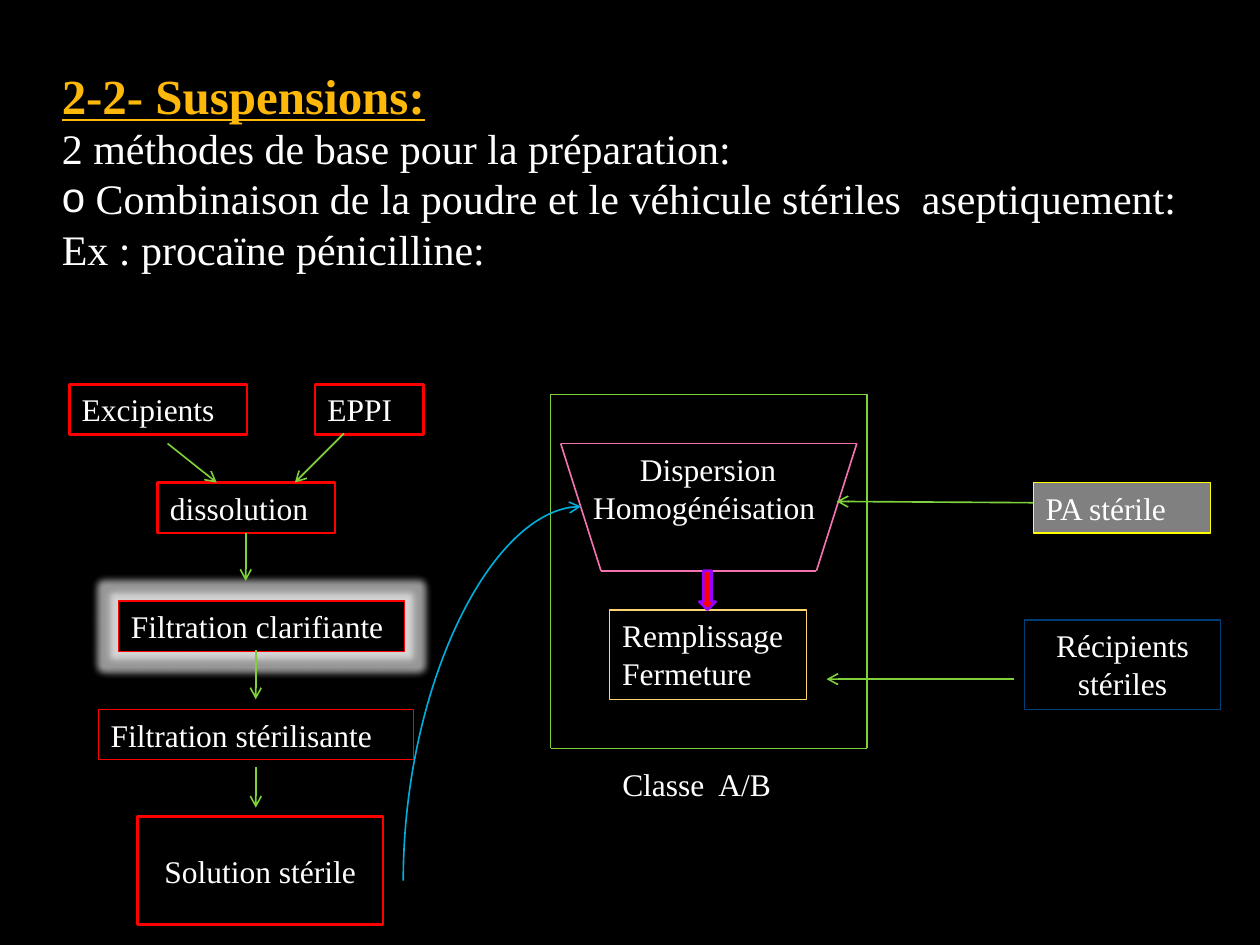
"""Build the slide on preparing sterile suspensions."""
from lxml import etree
from pptx import Presentation
from pptx.dml.color import RGBColor
from pptx.enum import shapes as sh, text as tx
from pptx.oxml.ns import qn
from pptx.util import Inches, Pt

BLACK = RGBColor(0x00, 0x00, 0x00)
WHITE = RGBColor(0xFF, 0xFF, 0xFF)
GOLD = RGBColor(0xFE, 0xB8, 0x0A)
RED = RGBColor(0xFF, 0x00, 0x00)
GREY = RGBColor(0x80, 0x80, 0x80)
YELLOW = RGBColor(0xFF, 0xFF, 0x00)
CREAM = RGBColor(0xFE, 0xD4, 0x6C)
NAVY = RGBColor(0x00, 0x3F, 0x75)
GREEN = RGBColor(0x7F, 0xD1, 0x3B)
PINK = RGBColor(0xF2, 0x73, 0xAF)
BLUE = RGBColor(0x00, 0xAD, 0xDC)
PURPLE = RGBColor(0x99, 0x00, 0xFF)
LEFT, MID = tx.PP_ALIGN.LEFT, tx.PP_ALIGN.CENTER

deck = Presentation()
deck.slide_width, deck.slide_height = Inches(10), Inches(7.5)
slide = deck.slides.add_slide(deck.slide_layouts[1])
slide.background.fill.solid()
slide.background.fill.fore_color.rgb = BLACK


def write(item, lines, size=18, color=WHITE, align=LEFT):
    frame = item.text_frame
    frame.word_wrap = True
    frame.auto_size = tx.MSO_AUTO_SIZE.NONE
    frame.vertical_anchor = tx.MSO_ANCHOR.TOP
    for i, line in enumerate(lines):
        para = frame.add_paragraph() if i else frame.paragraphs[0]
        para.alignment = align
        para.space_before = Pt(0)
        run = para.add_run()
        run.text = line
        run.font.name = "Times New Roman"
        run.font.size = Pt(size)
        run.font.color.rgb = color
    return frame


def link(x1, y1, x2, y2, color, arrow=False, kind=sh.MSO_CONNECTOR.STRAIGHT):
    wire = slide.shapes.add_connector(kind, *map(Inches, (x1, y1, x2, y2)))
    wire.line.color.rgb = color
    wire.line.width = Pt(0.94)
    props = wire._element.spPr
    etree.SubElement(props, qn("a:effectLst"))
    if arrow:
        etree.SubElement(props.find(qn("a:ln")), qn("a:tailEnd"), type="arrow")
    return wire


title, body = slide.placeholders
for item, top, high in ((title, 0.47, 0.5), (body, 0.92, 1.33)):
    item.left, item.top = Inches(0.39), Inches(top)
    item.width, item.height = Inches(9.38), Inches(high)
head = write(title, ["2-2- Suspensions:"], 28, GOLD).paragraphs[0].runs[0].font
head.bold = head.underline = True
lines = [
    "2 méthodes de base pour la préparation:",
    " Combinaison de la poudre et le véhicule stériles  aseptiquement:",
    "Ex : procaïne pénicilline:",
]
for para in write(body, lines, 24).paragraphs:
    props = para._p.get_or_add_pPr()
    props.set("marL", "0")
    props.set("indent", "0")
    if para.text == lines[1]:
        etree.SubElement(props, qn("a:buChar"), char="o")
    else:
        etree.SubElement(props, qn("a:buNone"))

boxes = [
    (0.55, 3.05, 1.41, 0.4, ["Excipients"], BLACK, RED, 1.5, LEFT),
    (2.5, 3.05, 0.86, 0.4, ["EPPI"], BLACK, RED, 1.5, LEFT),
    (1.25, 3.83, 1.41, 0.4, ["dissolution"], BLACK, RED, 1.5, LEFT),
    (0.94, 4.77, 2.27, 0.4, ["Filtration clarifiante"], BLACK, RED, 0.94, LEFT),
    (0.78, 5.63, 2.5, 0.4, ["Filtration stérilisante"], None, RED, 0.75, LEFT),
    (1.09, 6.48, 1.95, 0.86, ["Solution stérile"], BLACK, RED, 1.5, MID),
    (8.2, 3.83, 1.41, 0.4, ["PA stérile"], GREY, YELLOW, 0.75, LEFT),
    (4.84, 4.84, 1.56, 0.71, ["Remplissage", "Fermeture"], None, CREAM, 0.75, LEFT),
    (8.13, 4.92, 1.56, 0.71, ["Récipients stériles"], None, NAVY, 0.75, MID),
]
made = {}
for x, y, w, h, lines, fill, edge, thick, align in boxes:
    box = slide.shapes.add_shape(sh.MSO_SHAPE.RECTANGLE, *map(Inches, (x, y, w, h)))
    box.shadow.inherit = False
    if fill is None:
        box.fill.background()
    else:
        box.fill.solid()
        box.fill.fore_color.rgb = fill
    box.line.color.rgb = edge
    box.line.width = Pt(thick)
    write(box, lines, align=align)
    made[lines[0]] = box
made["Solution stérile"].text_frame.vertical_anchor = tx.MSO_ANCHOR.MIDDLE

effect = made["Filtration clarifiante"]._element.spPr.find(qn("a:effectLst"))
glow = etree.SubElement(effect, qn("a:glow"), rad=str(Inches(0.11)))
tint = etree.SubElement(glow, qn("a:srgbClr"), val=str(WHITE))
etree.SubElement(tint, qn("a:alpha"), val="60000")

frame = [(4.37, 3.13), (6.88, 3.13), (6.88, 5.94), (4.37, 5.94)]
funnel = [(4.45, 3.52), (6.8, 3.52), (6.48, 4.53), (4.77, 4.53)]
for points, color in ((frame, GREEN), (funnel, PINK)):
    for start, end in zip(points, points[1:] + points[:1]):
        link(*start, *end, color)

for ends in (
    (2.73, 3.44, 2.34, 3.83),
    (1.33, 3.52, 1.72, 3.83),
    (1.95, 4.23, 1.95, 4.61),
    (2.03, 5.16, 2.03, 5.55),
    (2.03, 6.09, 2.03, 6.41),
    (8.2, 3.99, 6.64, 3.98),
    (8.05, 5.39, 6.56, 5.39),
):
    link(*ends, GREEN, True)

curve = link(5.39, 6.21, 2.42, 4.8, BLUE, True, sh.MSO_CONNECTOR.CURVE)
curve._element.spPr.find(qn("a:xfrm")).set("rot", "5400000")
curve._element.spPr.find(qn("a:prstGeom")).set("prst", "curvedConnector2")

down = slide.shapes.add_shape(
    sh.MSO_SHAPE.DOWN_ARROW, *map(Inches, (5.55, 4.53, 0.13, 0.31)))
down.shadow.inherit = False
down.fill.solid()
down.fill.fore_color.rgb = RED
down.line.color.rgb = PURPLE
down.line.width = Pt(1.5)

for place, lines in (
    ((4.84, 6.02, 1.41, 0.4), ["Classe  A/B"]),
    ((4.61, 3.52, 2.11, 1.01), ["Dispersion", "Homogénéisation"]),
):
    note = write(slide.shapes.add_textbox(*map(Inches, place)), lines)
note.paragraphs[0]._p.get_or_add_pPr().set("marL", str(Inches(0.37)))

deck.save("out.pptx")
